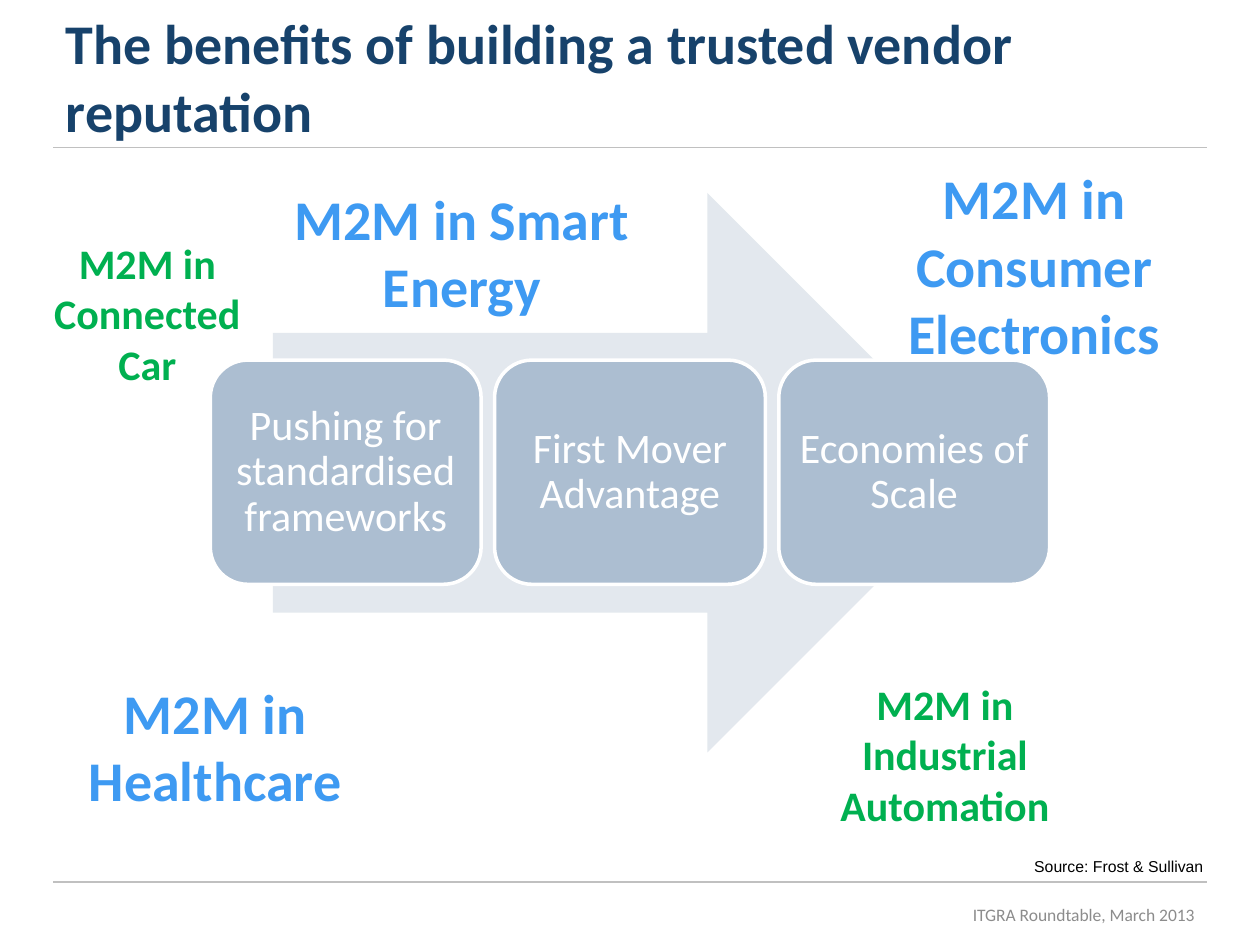
import pptx
import pptx.util
import pptx.dml.color
import pptx.enum.shapes
import pptx.enum.text
import pptx.oxml
from pptx.util import Cm, Pt

ALIGN = pptx.enum.text.PP_ALIGN
ANCHOR = pptx.enum.text.MSO_ANCHOR
SHAPE = pptx.enum.shapes.MSO_SHAPE

THEME = {
    "font": "Calibri", "source_font": "Arial",
    "title": "17426B", "major": "3E9AF2", "minor": "00B050",
    "arrow": "E3E8EE", "step": "ACBED1", "white": "FFFFFF",
    "rule": "C0C0C0", "footer": "8C8C8C", "black": "000000",
    "large": 32, "medium": 24, "small": 10, "tiny": 9,
}

TITLE = "The benefits of building a trusted vendor reputation"
FOOTER = "ITGRA Roundtable, March 2013"
SOURCE = "Source: Frost & Sullivan"
STEPS = ["Pushing for standardised frameworks", "First Mover Advantage", "Economies of Scale"]
# Text, emphasis, (left, top, width, height) in centimetres
MARKETS = [
    ("M2M in Healthcare", "major", (1.48, 13.55, 5.72, 2.99)),
    ("M2M in Smart Energy", "major", (5.5, 3.6, 7.62, 2.99)),
    ("M2M in Consumer Electronics", "major", (17.57, 3.18, 6.56, 4.37)),
    ("M2M in Connected Car", "minor", (0.64, 4.66, 4.66, 3.33)),
    ("M2M in Industrial Automation", "minor", (16.3, 13.55, 5.5, 3.33)),
]

RULE_LEFT, RULE_RIGHT = 1.07, 24.33
RULE_TOPS = (2.97, 17.78)
ARROW_BOX = (5.5, 3.89, 14.4, 11.28)
STEP_LEFT, STEP_TOP, STEP_WIDTH, STEP_HEIGHT, STEP_GAP = 4.24, 7.26, 5.46, 4.52, 0.27


def rgb(name):
    return pptx.dml.color.RGBColor.from_string(THEME[name])


def write(shape, text, size, color, bold=False, align=ALIGN.LEFT,
          anchor=ANCHOR.TOP, font="font", wrap=True):
    frame = shape.text_frame
    frame.text = text
    frame.word_wrap = wrap
    frame.auto_size = pptx.enum.text.MSO_AUTO_SIZE.NONE
    frame.vertical_anchor = anchor
    paragraph = frame.paragraphs[0]
    paragraph.alignment = align
    for run in paragraph.runs:
        run.font.name = THEME[font]
        run.font.size = Pt(THEME[size])
        run.font.bold = bold
        run.font.color.rgb = rgb(color)
    return paragraph


def add_text(slide, box, *args, **options):
    return write(slide.shapes.add_textbox(*map(Cm, box)), *args, **options)


def add_filled(slide, kind, box, color):
    shape = slide.shapes.add_shape(kind, *map(Cm, box))
    shape.shadow.inherit = False
    shape.fill.solid()
    shape.fill.fore_color.rgb = rgb(color)
    shape.line.fill.background()
    return shape


def add_rule(slide, top):
    rule = slide.shapes.add_connector(
        pptx.enum.shapes.MSO_CONNECTOR.STRAIGHT,
        Cm(RULE_LEFT), Cm(top), Cm(RULE_RIGHT), Cm(top))
    rule.line.color.rgb = rgb("rule")
    rule.line.width = Pt(0.75)
    properties = rule._element.spPr
    properties.append(properties.makeelement(pptx.oxml.ns.qn("a:effectLst"), {}))


def add_step(slide, index, text):
    left = STEP_LEFT + index * (STEP_WIDTH + STEP_GAP)
    step = add_filled(slide, SHAPE.ROUNDED_RECTANGLE,
                      (left, STEP_TOP, STEP_WIDTH, STEP_HEIGHT), "step")
    step.line.color.rgb = rgb("white")
    step.line.width = Pt(2)
    frame = step.text_frame
    frame.margin_left = frame.margin_right = Cm(0.03)
    frame.margin_top = frame.margin_bottom = Cm(0.03)
    paragraph = write(step, text, "medium", "white", align=ALIGN.CENTER, anchor=ANCHOR.MIDDLE)
    paragraph.line_spacing = 0.9


def main():
    presentation = pptx.Presentation()
    presentation.slide_width, presentation.slide_height = Cm(25.4), Cm(19.05)
    slide = presentation.slides.add_slide(presentation.slide_layouts[5])

    for top in RULE_TOPS:
        add_rule(slide, top)
    add_text(slide, (17.15, 17.83, 7.18, 1.22), FOOTER, "small", "footer",
             align=ALIGN.RIGHT, anchor=ANCHOR.MIDDLE)

    title = slide.shapes.title
    title.left, title.top, title.width, title.height = map(Cm, (1.07, 0.43, 23.29, 2.21))
    write(title, TITLE, "large", "title", bold=True, anchor=ANCHOR.MIDDLE)
    add_text(slide, (20.6, 17.15, 3.96, 0.64), SOURCE, "tiny", "black",
             font="source_font", wrap=False)

    add_filled(slide, SHAPE.RIGHT_ARROW, ARROW_BOX, "arrow")
    for index, text in enumerate(STEPS):
        add_step(slide, index, text)
    for text, emphasis, box in MARKETS:
        size = "large" if emphasis == "major" else "medium"
        add_text(slide, box, text, size, emphasis, bold=True, align=ALIGN.CENTER)

    presentation.save("out.pptx")


if __name__ == "__main__":
    main()
